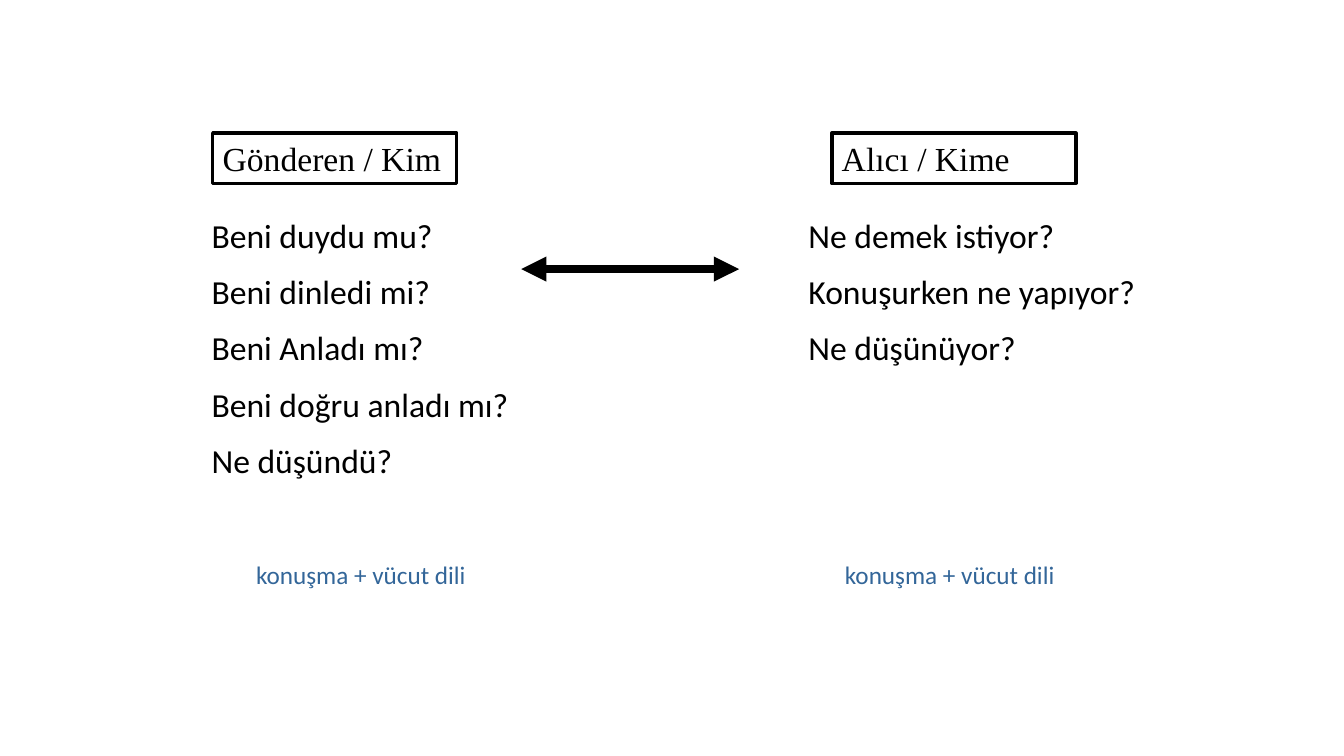
from lxml.etree import SubElement
from pptx import Presentation
from pptx.dml.color import RGBColor
from pptx.enum.shapes import MSO_CONNECTOR, MSO_SHAPE
from pptx.enum.text import MSO_ANCHOR, MSO_AUTO_SIZE, PP_ALIGN
from pptx.oxml.ns import qn
from pptx.util import Inches, Pt

COLORS = {"ink": "000000", "note": "336699"}
NOTE = "konuşma + vücut dili"
SIDES = [
    {
        "head": ("Gönderen / Kim", 2.11),
        "asks": ["Beni duydu mu?", "Beni dinledi mi?", "Beni Anladı mı?",
                 "Beni doğru anladı mı?", "Ne düşündü?"],
        "box": (2, 2.08, 3.25, 2.93),
        "note": 2.08,
    },
    {
        "head": ("Alıcı / Kime", 8.25),
        "asks": ["Ne demek istiyor?", "Konuşurken ne yapıyor?", "Ne düşünüyor?"],
        "box": (7.92, 2.08, 3.5, 1.72),
        "note": 7.92,
    },
]
ARROW = (5.17, 2.67, 7.33, 2.67)


def tint(name):
    return RGBColor.from_string(COLORS[name])


def write(shape, lines, size, font="Calibri", color="ink",
          align=PP_ALIGN.LEFT, wrap=True):
    frame = shape.text_frame
    frame.word_wrap = wrap
    frame.auto_size = MSO_AUTO_SIZE.SHAPE_TO_FIT_TEXT if wrap else MSO_AUTO_SIZE.NONE
    frame.vertical_anchor = MSO_ANCHOR.TOP
    for i, line in enumerate(lines):
        para = frame.add_paragraph() if i else frame.paragraphs[0]
        para.alignment = align
        if i:
            para.space_before = Pt(11.4)
        run = para.add_run()
        run.text = line
        run.font.size = Pt(size)
        run.font.name = font
        run.font.color.rgb = tint(color)


deck = Presentation()
deck.slide_width, deck.slide_height = Inches(13.33), Inches(7.5)
slide = deck.slides.add_slide(deck.slide_layouts[6])
shapes = slide.shapes

for side in SIDES:
    title, left = side["head"]
    head = shapes.add_shape(MSO_SHAPE.RECTANGLE, Inches(left), Inches(1.32),
                            Inches(2.42), Inches(0.5))
    head.shadow.inherit = False
    head.fill.background()
    head.line.color.rgb = tint("ink")
    head.line.width = Pt(2.5)
    write(head, [title], 24, "Times New Roman")

    asks = shapes.add_textbox(*map(Inches, side["box"]))
    write(asks, side["asks"], 24)

    note = shapes.add_textbox(Inches(side["note"]), Inches(5.5),
                              Inches(3), Inches(0.58))
    write(note, [NOTE], 18, color="note", align=PP_ALIGN.CENTER, wrap=False)

arrow = shapes.add_connector(MSO_CONNECTOR.STRAIGHT, *map(Inches, ARROW))
arrow.line.color.rgb = tint("ink")
arrow.line.width = Pt(6)
line = arrow.line._get_or_add_ln()
for end in ("a:headEnd", "a:tailEnd"):
    SubElement(line, qn(end), type="triangle")
SubElement(arrow._element.spPr, qn("a:effectLst"))

deck.save("out.pptx")
